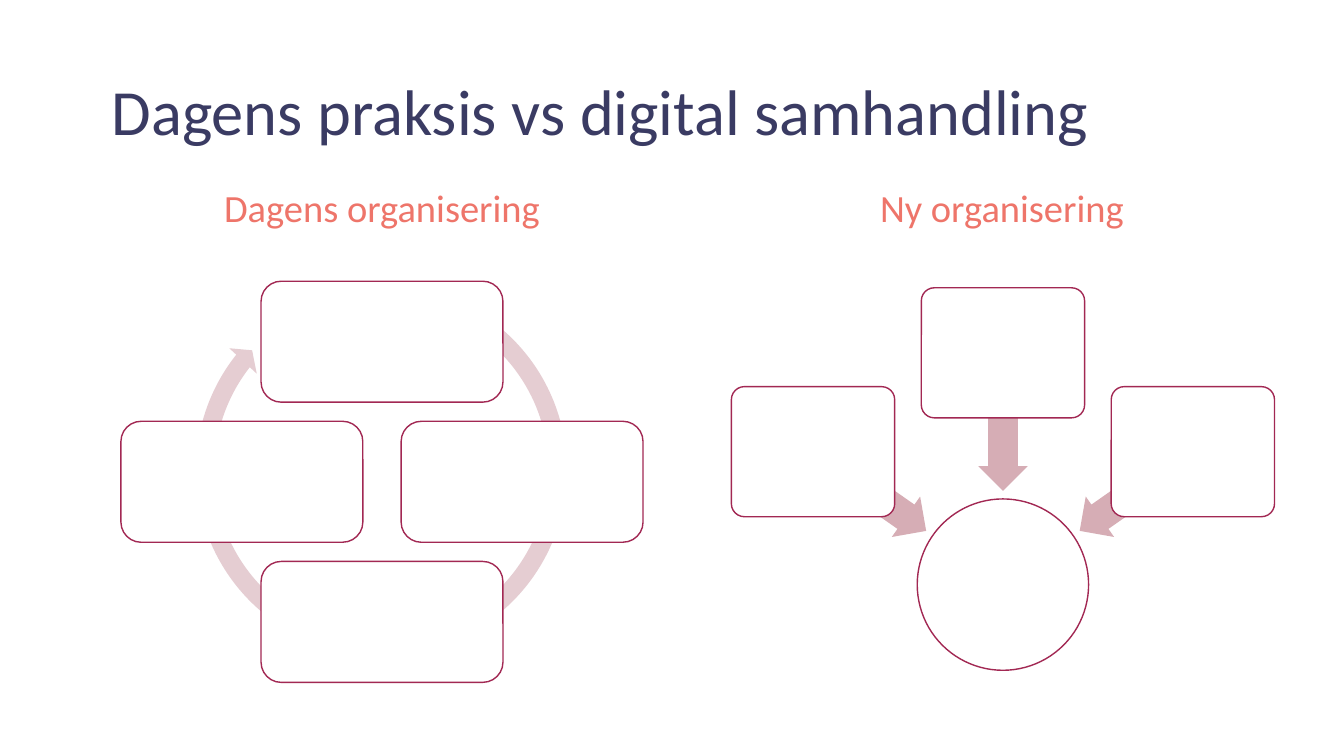
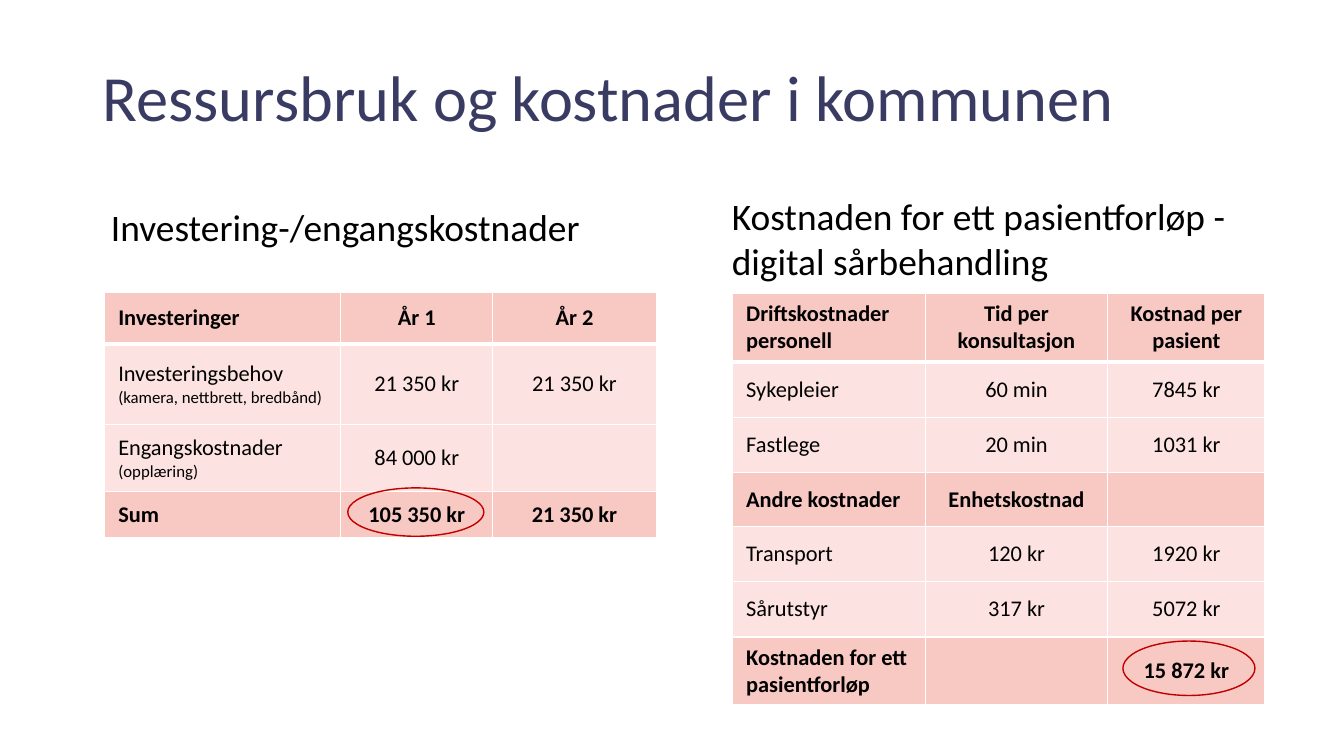
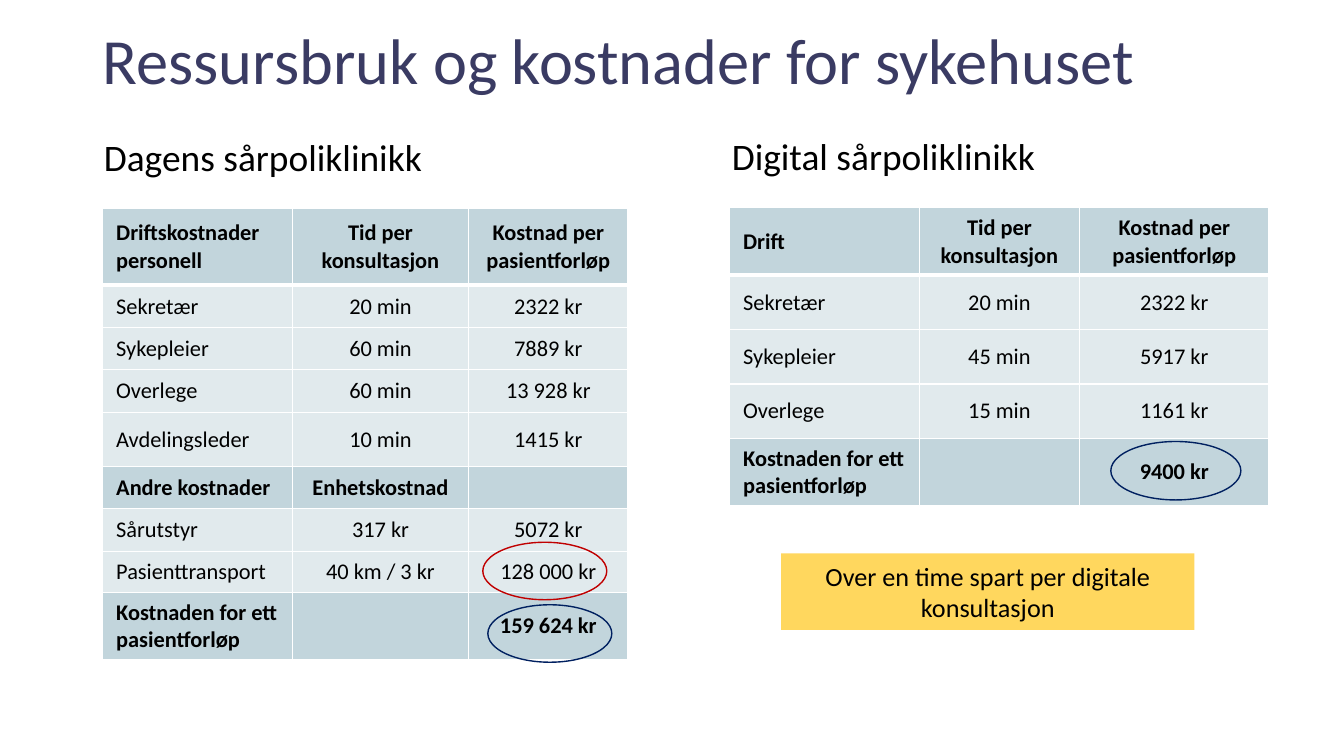
"""Three slides comparing today's practice with digital collaboration."""
import math
from dataclasses import dataclass

from lxml import etree
from pptx import Presentation, util as u
from pptx.dml.color import RGBColor
from pptx.enum import shapes, text
from pptx.oxml.ns import qn

KIND = shapes.MSO_SHAPE


@dataclass(frozen=True)
class Theme:
    """Colours, font and type sizes of the deck."""
    font: str = "Calibri"
    navy: str = "3A3B63"
    coral: str = "EE756A"
    black: str = "000000"
    white: str = "FFFFFF"
    wine: str = "A22853"
    ring: str = "E5CDD2"
    arrow: str = "D6ADB5"
    red: str = "C00000"
    blue: str = "002060"
    amber: str = "FFC000"
    rose: tuple = ("F8C8C3", "FCE3E1")
    mist: tuple = ("C2D5DC", "E1EAED")
    title: float = 46
    label: float = 27.5
    heading: float = 26.7
    callout: float = 18.7
    cell: float = 16
    note: float = 12


THEME = Theme()


def polar(centre, radius, degrees):
    """Return the point at an angle and distance from a centre."""
    angle = math.radians(degrees)
    return (centre[0] + radius * math.cos(angle),
            centre[1] + radius * math.sin(angle))


class Board:
    """Draws elements on the current slide, on a grid of 80 columns by 45 rows."""

    COLUMNS, ROWS = 80, 45
    UNIT = u.Inches(7.5) / ROWS

    def __init__(self):
        """Open an empty widescreen deck."""
        self.deck = Presentation()
        self.deck.slide_width = self.grid(self.COLUMNS)
        self.deck.slide_height = self.grid(self.ROWS)
        self.page = None

    def grid(self, count):
        """Turn grid units into a length."""
        return u.Emu(round(count * self.UNIT))

    def new_page(self, title, left, top):
        """Start a blank slide with its title."""
        self.page = self.deck.slides.add_slide(self.deck.slide_layouts[6])
        para = self.text(title, (left, top, 69.5, 4.2), THEME.title, THEME.navy)
        para.line_spacing = 0.9

    def style(self, para, size, colour=THEME.black, bold=False, centred=False):
        """Format a paragraph and its runs."""
        para.alignment = text.PP_ALIGN.CENTER if centred else text.PP_ALIGN.LEFT
        for span in para.runs:
            span.font.name = THEME.font
            span.font.size = u.Pt(size)
            span.font.bold = bold
            span.font.color.rgb = RGBColor.from_string(colour)

    def inset(self, owner, across, down):
        """Set the inner margins of a frame or cell."""
        owner.margin_left = owner.margin_right = self.grid(across)
        owner.margin_top = owner.margin_bottom = self.grid(down)

    def text(self, words, area, size=THEME.heading, colour=THEME.black, centred=False):
        """Add a wrapped text box and return its paragraph."""
        frame = self.page.shapes.add_textbox(*map(self.grid, area)).text_frame
        frame.word_wrap = True
        self.inset(frame, 0, 0)
        frame.text = words
        para = frame.paragraphs[0]
        self.style(para, size, colour, centred=centred)
        return para

    def shape(self, kind, area, fill=None, line=None, adjust=(), turn=0):
        """Add a preset shape with the given fill and outline."""
        box = self.page.shapes.add_shape(kind, *map(self.grid, area))
        box.shadow.inherit = False
        box.rotation = turn
        for index, value in enumerate(adjust):
            box.adjustments[index] = value
        if fill:
            box.fill.solid()
            box.fill.fore_color.rgb = RGBColor.from_string(fill)
        else:
            box.fill.background()
        if line:
            box.line.color.rgb = RGBColor.from_string(line)
            box.line.width = u.Pt(1)
        else:
            box.line.fill.background()
        return box

    def centred(self, kind, centre, size, **look):
        """Add a preset shape around a centre point."""
        corner = [middle - length / 2 for middle, length in zip(centre, size)]
        return self.shape(kind, (*corner, *size), **look)

    def callout(self, words, area):
        """Add a translucent box with a message."""
        box = self.shape(KIND.RECTANGLE, area, fill=THEME.amber)
        colour = box.element.spPr.find(".//" + qn("a:srgbClr"))
        etree.SubElement(colour, qn("a:alpha"), val="63000")
        frame = box.text_frame
        frame.word_wrap = True
        self.inset(frame, 0.8, 0.4)
        frame.text = words
        self.style(frame.paragraphs[0], THEME.callout, centred=True)

    def borders(self, cell_xml, widths):
        """Give a cell white borders, ordered left, right, top, bottom."""
        properties = cell_xml.find(qn("a:tcPr"))
        for index, (side, width) in enumerate(zip("LRTB", widths)):
            line = etree.Element(qn("a:ln" + side), w=str(u.Pt(width)))
            fill = etree.SubElement(line, qn("a:solidFill"))
            etree.SubElement(fill, qn("a:srgbClr"), val=THEME.white)
            properties.insert(index, line)

    def table(self, corner, columns, heights, rows, colours, strong):
        """Add a table whose strong rows are bold and darker."""
        area = (*corner, sum(columns), sum(heights))
        frame = self.page.shapes.add_table(len(rows), len(columns), *map(self.grid, area))
        table = frame.table
        for column, width in zip(table.columns, columns):
            column.width = self.grid(width)
        for row, height in zip(table.rows, heights):
            row.height = self.grid(height)
        cells_xml = frame.element.iter(qn("a:tc"))
        for r, row in enumerate(rows):
            dark = r in strong
            for c, words in enumerate(row):
                cell = table.cell(r, c)
                cell.text = words
                cell.vertical_anchor = text.MSO_ANCHOR.MIDDLE
                self.inset(cell, 0.8, 0.4)
                cell.fill.solid()
                cell.fill.fore_color.rgb = RGBColor.from_string(colours[0 if dark else 1])
                for para in cell.text_frame.paragraphs:
                    size = THEME.note if para.text.startswith("(") else THEME.cell
                    self.style(para, size, bold=dark, centred=c > 0)
                cell_xml = next(cells_xml)
                if not words:
                    para_xml = cell_xml.find(".//" + qn("a:p"))
                    etree.SubElement(para_xml, qn("a:endParaRPr"), sz=str(THEME.cell * 100))
                self.borders(cell_xml, (1, 1, 3 if r == 1 else 1, 3 if r == 0 else 1))

    def mark(self, area, colour):
        """Ring a figure with an ellipse."""
        self.shape(KIND.OVAL, area, line=colour)


def organisation(board):
    """Draw the cycle of today and the hub of the new organisation."""
    board.new_page("Dagens praksis vs digital samhandling", 6.66, 4.74)
    for words, left in (("Dagens organisering", 6.66), ("Ny organisering", 43.56)):
        board.text(words, (left, 10.98, 32.16, 2.76), THEME.label, THEME.coral, centred=True)
    card = {"fill": THEME.white, "line": THEME.wine}

    hub = (59.7, 34.8)
    board.centred(KIND.OVAL, hub, (10.2, 10.2), **card)
    for angle in (215, 270, 325):
        board.centred(KIND.LEFT_ARROW, polar(hub, 9.69, angle), (8.22, 2.94),
                      fill=THEME.arrow, adjust=(0.6, 0.5), turn=angle)
        board.centred(KIND.ROUNDED_RECTANGLE, polar(hub, 13.8, angle), (9.72, 7.74),
                      adjust=(0.1,), **card)

    board.centred(KIND.CIRCULAR_ARROW, (22.71, 27.99), (23.22, 23.22), fill=THEME.ring,
                  adjust=(0.047, 2.729, 130.963, 178.53, 0.048))
    for angle in range(0, 360, 90):
        board.centred(KIND.ROUNDED_RECTANGLE, polar((22.74, 28.68), 8.34, angle),
                      (14.4, 7.2), **card)


def municipality(board):
    """Show the costs of the municipality."""
    board.new_page("Ressursbruk og kostnader i kommunen", 6.12, 3.9)
    board.text("Investering-/engangskostnader", (6.6, 12.18, 32.1, 2.7))
    board.text("Kostnaden for ett pasientforløp - digital sårbehandling",
               (43.56, 11.52, 32.1, 5.4))
    board.table((43.62, 17.46), (11.46, 10.86, 9.36),
                (4.08, 3.3, 3.3, 3.18, 3.3, 3.3, 4.02), (
        ("Driftskostnader\npersonell", "Tid per konsultasjon", "Kostnad per pasient"),
        ("Sykepleier", "60 min", "7845 kr"),
        ("Fastlege", "20 min", "1031 kr"),
        ("Andre kostnader", "Enhetskostnad", ""),
        ("Transport", "120 kr", "1920 kr"),
        ("Sårutstyr", "317 kr", "5072 kr"),
        ("Kostnaden for ett pasientforløp", "", "15 872 kr"),
    ), THEME.rose, (0, 3, 6))
    board.table((6.24, 17.4), (14.04, 9.06, 9.72), (3.06, 4.8, 4.02, 2.7), (
        ("Investeringer", "År 1", "År 2"),
        ("Investeringsbehov\n(kamera, nettbrett, bredbånd)", "21 350 kr", "21 350 kr"),
        ("Engangskostnader\n(opplæring)", "84 000 kr", ""),
        ("Sum", "105 350 kr", "21 350 kr"),
    ), THEME.rose, (0, 3))
    board.mark((20.7, 29.04, 8.1, 2.88), THEME.red)
    board.mark((66.84, 38.16, 7.86, 3.24), THEME.red)


def hospital(board):
    """Show the costs of the hospital."""
    board.new_page("Ressursbruk og kostnader for sykehuset", 6.12, 1.74)
    board.text("Dagens sårpoliklinikk", (6.18, 7.98, 29, 2.7))
    board.text("Digital sårpoliklinikk", (43.56, 7.92, 32.1, 2.7))
    board.table((6.12, 12.42), (11.28, 10.5, 9.48),
                (4.56, 2.52, 2.52, 2.52, 3.24, 2.52, 2.52, 2.46, 4.02), (
        ("Driftskostnader\npersonell", "Tid per konsultasjon", "Kostnad per pasientforløp"),
        ("Sekretær", "20 min", "2322 kr"),
        ("Sykepleier", "60 min", "7889 kr"),
        ("Overlege", "60 min", "13 928 kr"),
        ("Avdelingsleder", "10 min", "1415 kr"),
        ("Andre kostnader", "Enhetskostnad", ""),
        ("Sårutstyr", "317 kr", "5072 kr"),
        ("Pasienttransport", "40 km / 3 kr", "128 000 kr"),
        ("Kostnaden for ett pasientforløp", "", "159 624 kr"),
    ), THEME.mist, (0, 5, 8))
    board.table((43.44, 12.36), (11.28, 9.54, 11.28), (4.02, 3.24, 3.24, 3.24, 4.02), (
        ("Drift", "Tid per konsultasjon", "Kostnad per pasientforløp"),
        ("Sekretær", "20 min", "2322 kr"),
        ("Sykepleier", "45 min", "5917 kr"),
        ("Overlege", "15 min", "1161 kr"),
        ("Kostnaden for ett pasientforløp", "", "9400 kr"),
    ), THEME.mist, (0, 4))
    board.callout("Over en time spart per digitale konsultasjon", (46.5, 32.94, 24.6, 4.56))
    board.mark((29.04, 36, 7.38, 3.42), THEME.blue)
    board.mark((66.12, 26.28, 7.74, 3.48), THEME.blue)
    board.mark((28.74, 32.28, 7.38, 3.42), THEME.red)


def main():
    """Build and save the deck."""
    board = Board()
    for draw in (organisation, municipality, hospital):
        draw(board)
    board.deck.save("out.pptx")


if __name__ == "__main__":
    main()
